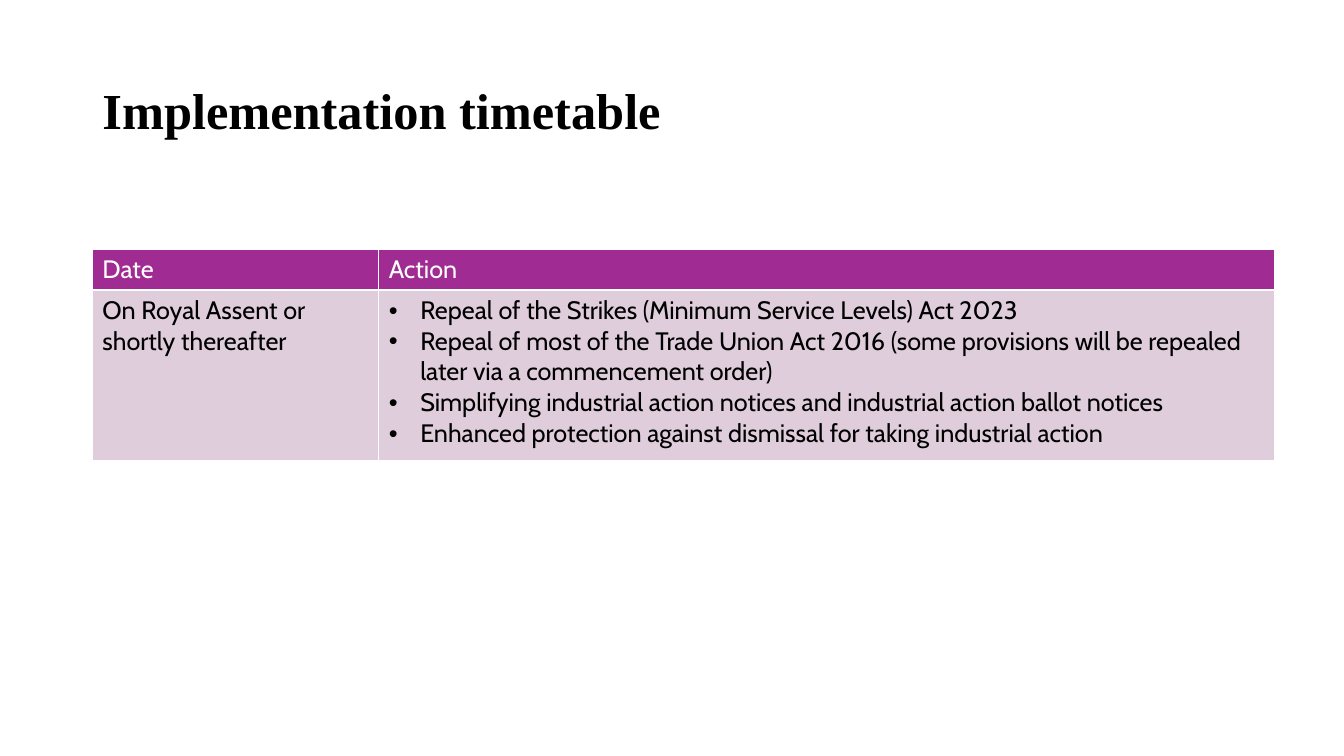
"""Build the implementation timetable slide."""
from lxml.etree import SubElement
from pptx import Presentation
from pptx.dml.color import RGBColor
from pptx.enum.text import MSO_ANCHOR, PP_ALIGN
from pptx.oxml.ns import qn
from pptx.util import Pt

TITLE = "Implementation timetable"
HEADERS = ["Date", "Action"]
DATE = "On Royal Assent or shortly thereafter"
ACTIONS = [
    "Repeal of the Strikes (Minimum Service Levels) Act 2023",
    "Repeal of most of the Trade Union Act 2016 (some provisions will be repealed later via a commencement order)",
    "Simplifying industrial action notices and industrial action ballot notices",
    "Enhanced protection against dismissal for taking industrial action",
]
ROWS = [
    {"cells": [[header] for header in HEADERS], "height": 28.3, "fill": "A02B93", "color": "FFFFFF"},
    {"cells": [[DATE], ACTIONS], "height": 121.7, "fill": "DFCDDC", "color": "000000"},
]
COLUMN_WIDTHS = [204.5, 640]
LEFT, TITLE_TOP, TABLE_TOP = 66, 28.8, 178
WIDTH = sum(COLUMN_WIDTHS)
BULLET_INDENT = 22.5


def color(value):
    return RGBColor.from_string(value)


def add_text(paragraph, text, font_name, size, text_color, bold=False):
    run = paragraph.add_run()
    run.text = text
    run.font.name = font_name
    run.font.size = Pt(size)
    run.font.bold = bold
    run.font.color.rgb = color(text_color)


def add_bullet(paragraph):
    properties = paragraph._p.get_or_add_pPr()
    properties.set("marL", str(Pt(BULLET_INDENT)))
    properties.set("indent", str(-Pt(BULLET_INDENT)))
    SubElement(properties, qn("a:buFont")).set("typeface", "Arial")
    SubElement(properties, qn("a:buChar")).set("char", "•")


def add_borders(cell):
    properties = cell._tc.get_or_add_tcPr()
    for side in ("L", "R", "T", "B"):
        line = SubElement(properties, qn(f"a:ln{side}"), w=str(Pt(1)))
        fill = SubElement(line, qn("a:solidFill"))
        SubElement(fill, qn("a:srgbClr")).set("val", "FFFFFF")


def fill_cell(cell, lines, row):
    add_borders(cell)
    cell.fill.solid()
    cell.fill.fore_color.rgb = color(row["fill"])
    frame = cell.text_frame
    for index, text in enumerate(lines):
        paragraph = frame.add_paragraph() if index else frame.paragraphs[0]
        if len(lines) > 1:
            add_bullet(paragraph)
        add_text(paragraph, text, "Cabin", 18, row["color"])


def add_title(slide):
    title = slide.shapes.title
    title.left, title.top = Pt(LEFT), Pt(TITLE_TOP)
    title.width, title.height = Pt(WIDTH), Pt(104.4)
    title.text_frame.vertical_anchor = MSO_ANCHOR.MIDDLE
    paragraph = title.text_frame.paragraphs[0]
    paragraph.alignment = PP_ALIGN.LEFT
    paragraph.line_spacing = 0.9
    add_text(paragraph, TITLE, "Times New Roman", 36, "000000", bold=True)


def add_timetable(slide):
    height = sum(row["height"] for row in ROWS)
    table = slide.shapes.add_table(
        len(ROWS), len(COLUMN_WIDTHS), Pt(LEFT), Pt(TABLE_TOP), Pt(WIDTH), Pt(height)
    ).table
    table.horz_banding = False
    for column, width in zip(table.columns, COLUMN_WIDTHS):
        column.width = Pt(width)
    for table_row, row in zip(table.rows, ROWS):
        table_row.height = Pt(row["height"])
        for cell, lines in zip(table_row.cells, row["cells"]):
            fill_cell(cell, lines, row)


def main():
    presentation = Presentation()
    presentation.slide_width, presentation.slide_height = Pt(960), Pt(540)
    slide = presentation.slides.add_slide(presentation.slide_layouts[5])
    add_title(slide)
    add_timetable(slide)
    presentation.save("out.pptx")


if __name__ == "__main__":
    main()
